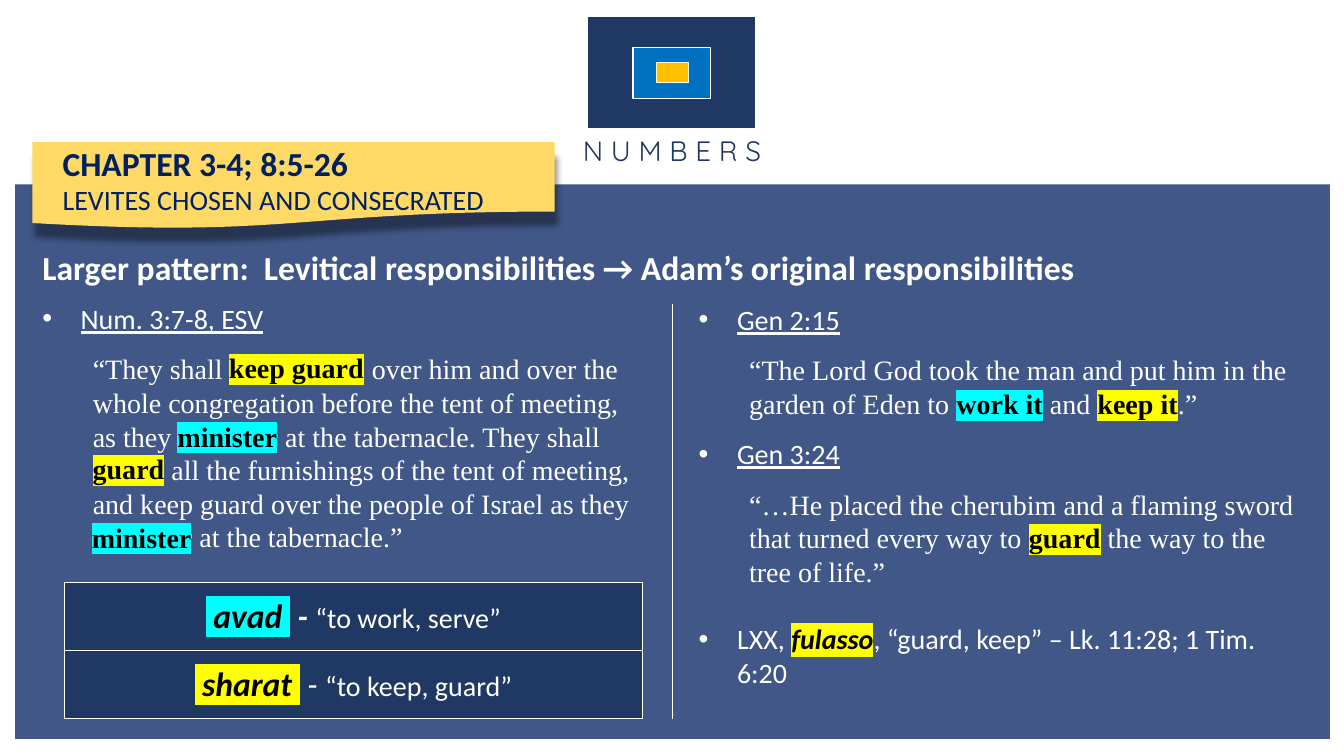
from dataclasses import dataclass, field
from typing import Any, NamedTuple

import lxml.etree
import pptx
import pptx.dml.color
import pptx.enum.shapes
import pptx.enum.text
import pptx.oxml
import pptx.oxml.ns
import pptx.util

Inches = pptx.util.Inches
Pt = pptx.util.Pt
qn = pptx.oxml.ns.qn
ALIGN = pptx.enum.text.PP_ALIGN
ANCHOR = pptx.enum.text.MSO_ANCHOR
AUTOSIZE = pptx.enum.text.MSO_AUTO_SIZE
SHAPE = pptx.enum.shapes.MSO_SHAPE

COLORS = {
    "white": "FFFFFF", "black": "000000", "navy": "203864", "ink": "002060",
    "blue": "0070C0", "gold": "FFC000", "sand": "FFD966",
    "cyan": "00FFFF", "yellow": "FFFF00",
}
SANS, SERIF = "Calibri", "Times New Roman"


class Box(NamedTuple):
    left: float
    top: float
    width: float
    height: float

    def lengths(self) -> list[int]:
        return [Inches(value) for value in self]


@dataclass
class Run:
    text: str
    color: str = "white"
    highlight: str = ""
    font: dict[str, Any] = field(default_factory=dict)


@dataclass
class Item:
    runs: list[Run]
    quote: bool = False
    after: int = 6


class Mark(NamedTuple):
    word: str
    highlight: str
    box: Box


class Court(NamedTuple):
    color: str
    box: Box


def apply(target: Any, formats: dict[str, Any]) -> None:
    for name, value in formats.items():
        setattr(target, name, value)


def rgb(color: str) -> pptx.dml.color.RGBColor:
    return pptx.dml.color.RGBColor.from_string(COLORS[color])


def add_element(parent: Any, tag: str, **attributes: str) -> Any:
    return lxml.etree.SubElement(parent, qn(tag), attributes)


def write(paragraph: Any, runs: list[Run], name: str = SANS, size: int = 20) -> None:
    for part in runs:
        run = paragraph.add_run()
        run.text = part.text
        apply(run.font, {"name": name, "size": Pt(size), "bold": False} | part.font)
        run.font.color.rgb = rgb(part.color)
        if part.highlight:
            properties = run.font._element
            highlight = add_element(properties, "a:highlight")
            add_element(highlight, "a:srgbClr", val=COLORS[part.highlight])
            properties.find(qn("a:solidFill")).addnext(highlight)


def marked(word: str, highlight: str, **font: Any) -> Run:
    return Run(word, "black", highlight, {"bold": True} | font)


def set_insets(frame: Any, left: float, top: float, right: float, bottom: float) -> None:
    apply(frame, {"margin_left": Inches(left), "margin_top": Inches(top),
                  "margin_right": Inches(right), "margin_bottom": Inches(bottom)})


def place(holder: Any, box: Box) -> None:
    apply(holder, dict(zip(box._fields, box.lengths())))


def add_block(shapes: Any, kind: Any, box: Box, color: str, outline: str = "") -> Any:
    block = shapes.add_shape(kind, *box.lengths())
    block.shadow.inherit = False
    block.fill.solid()
    block.fill.fore_color.rgb = rgb(color)
    if outline:
        block.line.color.rgb = rgb(outline)
        block.line.width = Pt(1)
    else:
        block.line.fill.background()
    return block


def add_label(shapes: Any, box: Box, run: Run, name: str, inset: bool) -> None:
    frame = shapes.add_textbox(*box.lengths()).text_frame
    apply(frame, {"word_wrap": True, "auto_size": AUTOSIZE.SHAPE_TO_FIT_TEXT})
    if not inset:
        set_insets(frame, 0, 0, 0, 0)
    frame.paragraphs[0].alignment = ALIGN.CENTER
    write(frame.paragraphs[0], [run], name)


def fill_list(holder: Any, box: Box, items: list[Item]) -> None:
    place(holder, box)
    frame = holder.text_frame
    apply(frame, {"auto_size": AUTOSIZE.NONE, "vertical_anchor": ANCHOR.TOP, "word_wrap": True})
    for index, item in enumerate(items):
        paragraph = frame.add_paragraph() if index else frame.paragraphs[0]
        apply(paragraph, {"level": int(item.quote), "space_before": Pt(6), "space_after": Pt(item.after)})
        margin, indent = (0.5, 0) if item.quote else (0.38, -0.38)
        properties = paragraph._p.get_or_add_pPr()
        properties.set("marL", str(Inches(margin)))
        properties.set("indent", str(Inches(indent)))
        if item.quote:
            add_element(properties, "a:buNone")
        else:
            add_element(properties, "a:buChar", char="•")
        write(paragraph, item.runs, SERIF if item.quote else SANS)


def reference(text: str) -> Item:
    return Item([Run(text, font={"underline": True})])


def add_glossary(shapes: Any, box: Box, entries: list[list[Run]]) -> None:
    table = shapes.add_table(len(entries), 1, *box.lengths()).table
    apply(table, {"first_row": False, "horz_banding": False})
    for row, runs in enumerate(entries):
        cell = table.cell(row, 0)
        set_insets(cell, 0, 0, 0, 0)
        cell.vertical_anchor = ANCHOR.MIDDLE
        cell.text_frame.paragraphs[0].alignment = ALIGN.CENTER
        write(cell.text_frame.paragraphs[0], runs, size=24)
        properties = cell._tc.get_or_add_tcPr()
        for side in "LRTB":
            border = add_element(properties, f"a:ln{side}", w=str(Pt(1)))
            add_element(add_element(border, "a:solidFill"), "a:srgbClr", val=COLORS["white"])
        cell.fill.solid()
        cell.fill.fore_color.rgb = rgb("navy")


def add_banner(shapes: Any, box: Box, lines: list[Run]) -> None:
    banner = add_block(shapes, SHAPE.FLOWCHART_DOCUMENT, box, "sand")
    shadow = add_element(banner._element.spPr.find(qn("a:effectLst")), "a:outerShdw",
                         blurRad=str(Pt(4)), dist=str(Pt(10)), dir=str(80 * 60000),
                         algn="tl", rotWithShape="0")
    tint = add_element(shadow, "a:srgbClr", val=COLORS["black"])
    add_element(tint, "a:alpha", val="40000")
    frame = banner.text_frame
    set_insets(frame, 0.3, 0.1, 0.1, 0.05)
    frame.vertical_anchor = ANCHOR.MIDDLE
    for index, line in enumerate(lines):
        paragraph = frame.add_paragraph() if index else frame.paragraphs[0]
        paragraph.alignment = ALIGN.LEFT
        write(paragraph, [line])


COURTS = [
    Court("navy", Box(5.83, 0.16, 1.67, 1.12)),
    Court("blue", Box(6.28, 0.47, 0.77, 0.51)),
    Court("gold", Box(6.51, 0.62, 0.32, 0.2)),
]
MARKS = [
    Mark("keep guard", "yellow", Box(2.24, 3.48, 1.4, 0.34)),
    Mark("guard", "yellow", Box(0.86, 4.48, 0.83, 0.34)),
    Mark("minister", "cyan", Box(1.73, 4.16, 1.05, 0.34)),
    Mark("minister", "cyan", Box(0.85, 5.16, 1.11, 0.34)),
]
BOLD = {"bold": True}
GLOSS = {"size": Pt(20)}
LEVITES = [
    reference("Num. 3:7-8, ESV"),
    Item([Run("“They shall "), Run("keep guard ", font=BOLD),
          Run("over him and over the whole congregation before the tent of meeting, as they "),
          Run("minister", font=BOLD), Run(" at the tabernacle. They shall "), Run("guard", font=BOLD),
          Run(" all the furnishings of the tent of meeting, and keep guard over the people of Israel as they "),
          Run("minister", font=BOLD), Run(" at the tabernacle.”")], quote=True, after=18),
]
ADAM = [
    reference("Gen 2:15"),
    Item([Run("“The Lord God took the man and put him in the garden of Eden to "),
          marked("work it", "cyan"), Run(" and "), marked("keep it", "yellow"), Run(".”")], quote=True),
    reference("Gen 3:24"),
    Item([Run("“…He placed the cherubim and a flaming sword that turned every way to "),
          marked("guard", "yellow"), Run(" the way to the tree of life.”")], quote=True, after=18),
    Item([Run("LXX, "), marked("fulasso", "yellow", italic=True), Run(", “guard, keep” – Lk. 11:28; 1 Tim. 6:20")]),
]
GLOSSARY = [
    [marked(" avad ", "cyan", italic=True), Run(" - ", font=BOLD | {"italic": True}),
     Run("“to work, serve”", font=GLOSS)],
    [marked(" sharat ", "yellow", italic=True), Run(" - ", font={"italic": True}),
     Run("“to keep, guard”", font=GLOSS)],
]


def main() -> None:
    deck = pptx.Presentation()
    apply(deck, {"slide_width": Inches(13.33), "slide_height": Inches(7.5)})
    slide = deck.slides.add_slide(deck.slide_layouts[3])
    shapes = slide.shapes
    heading, levites, adam = slide.placeholders

    panel = add_block(shapes, SHAPE.RECTANGLE, Box(0.15, 1.83, 13.04, 5.5), "ink")
    add_element(panel._element.spPr.find(qn("a:solidFill"))[0], "a:alpha", val="75000")
    shapes._spTree.insert(2, panel._element)

    camp = shapes.add_group_shape()
    for court in COURTS:
        add_block(camp.shapes, SHAPE.RECTANGLE, court.box, court.color, "white")
    add_label(shapes, Box(5.67, 1.28, 1.99, 0.44), Run("N U M B E R S", "navy"), "Quicksand", True)

    place(heading, Box(0.32, 2.4, 10.58, 0.5))
    apply(heading.text_frame, {"auto_size": AUTOSIZE.NONE, "vertical_anchor": ANCHOR.TOP, "word_wrap": False})
    heading.text_frame.paragraphs[0].alignment = ALIGN.LEFT
    write(heading.text_frame.paragraphs[0],
          [Run("Larger pattern:  Levitical responsibilities → Adam’s original responsibilities", font=BOLD)],
          size=24)
    fill_list(levites, Box(0.32, 2.94, 6.19, 4.23), LEVITES)
    fill_list(adam, Box(6.83, 2.95, 6.19, 4.22), ADAM)

    add_banner(shapes, Box(0.32, 1.41, 5.18, 0.86), [
        Run("CHAPTER 3-4; 8:5-26", "ink", font=BOLD | {"size": Pt(24)}),
        Run("LEVITES CHOSEN AND CONSECRATED", "ink"),
    ])
    add_glossary(shapes, Box(0.64, 5.78, 5.73, 1.35), GLOSSARY)
    for mark in MARKS:
        add_label(shapes, mark.box, marked(mark.word, mark.highlight), SERIF, False)

    divider = shapes.add_connector(pptx.enum.shapes.MSO_CONNECTOR.STRAIGHT,
                                   Inches(6.67), Inches(3.02), Inches(6.67), Inches(7.13))
    divider.line.color.rgb = rgb("white")
    divider.line.width = Pt(0.5)
    add_element(divider._element.spPr, "a:effectLst")
    deck.save("out.pptx")


if __name__ == "__main__":
    main()
